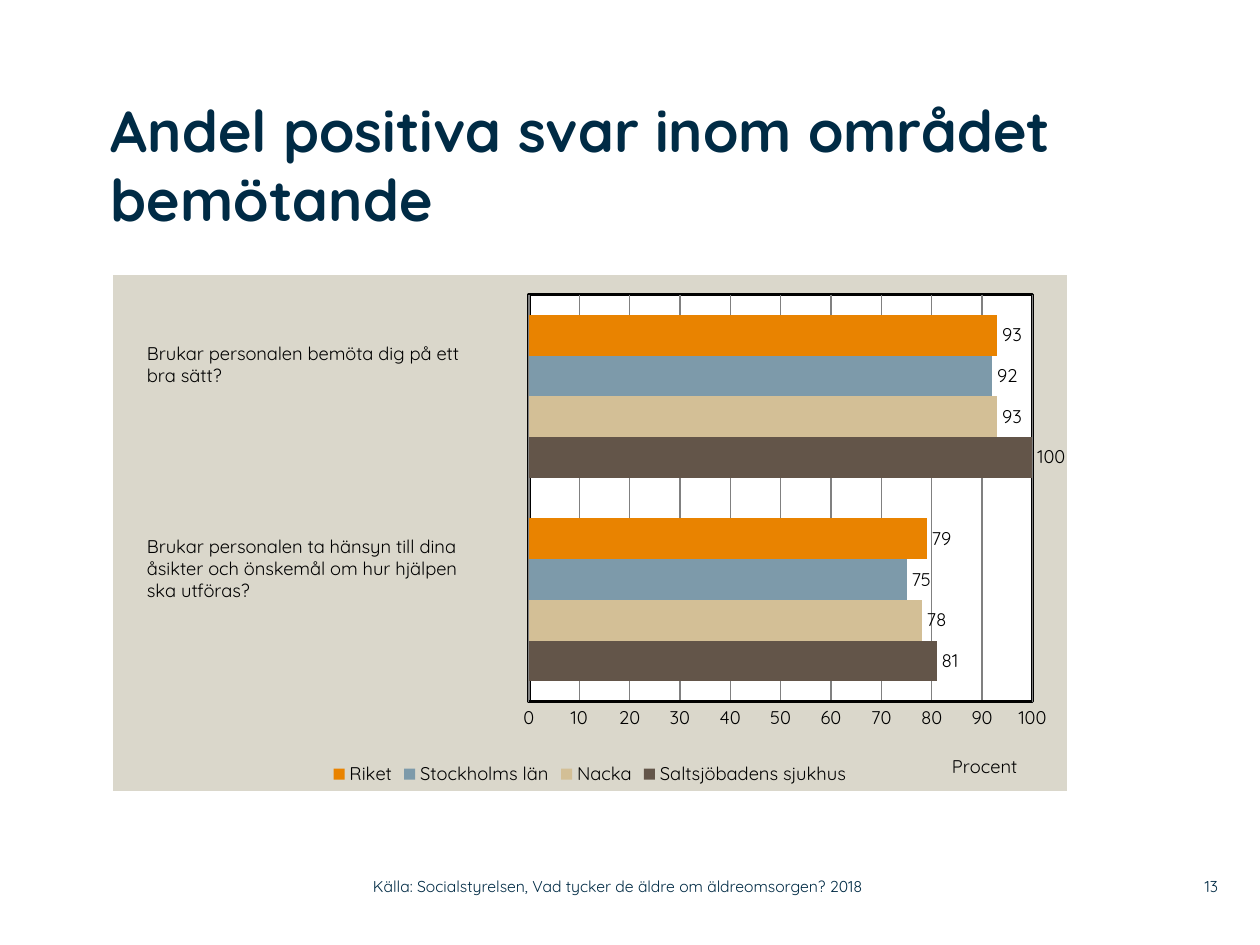
from lxml.etree import SubElement
from pptx import Presentation
from pptx.chart.data import CategoryChartData
from pptx.dml.color import RGBColor
from pptx.enum.chart import XL_CHART_TYPE, XL_LABEL_POSITION, XL_LEGEND_POSITION, XL_TICK_MARK
from pptx.enum.text import MSO_ANCHOR, PP_ALIGN
from pptx.oxml import parse_xml
from pptx.oxml.ns import nsdecls, qn
from pptx.util import Pt

FONT = "Quicksand"
NAVY = RGBColor(0x00, 0x2B, 0x45)
BLACK = RGBColor(0x00, 0x00, 0x00)
WHITE = RGBColor(0xFF, 0xFF, 0xFF)
GREY = RGBColor(0x80, 0x80, 0x80)
SAND = RGBColor(0xDA, 0xD7, 0xCB)
BROWN = RGBColor(0x63, 0x55, 0x49)
BEIGE = RGBColor(0xD3, 0xBF, 0x96)
BLUE = RGBColor(0x7D, 0x9A, 0xAA)
ORANGE = RGBColor(0xE9, 0x83, 0x00)


def px(*lengths):
    return [round(length * 914400 / 126) for length in lengths]


def add_text(box, lines, size, color, bold=False, align=PP_ALIGN.LEFT,
             anchor=MSO_ANCHOR.TOP, insets=(0, 0)):
    frame = slide.shapes.add_textbox(*px(*box)).text_frame
    frame.word_wrap = True
    frame.vertical_anchor = anchor
    frame.margin_left, frame.margin_top = px(*insets)
    frame.margin_right, frame.margin_bottom = px(*insets)
    for number, line in enumerate(lines):
        paragraph = frame.add_paragraph() if number else frame.paragraphs[0]
        paragraph.alignment = align
        run = paragraph.add_run()
        run.text = line
        run.font.name = FONT
        run.font.size = Pt(size)
        run.font.bold = bold
        run.font.color.rgb = color


presentation = Presentation()
presentation.slide_width, presentation.slide_height = px(1260, 945)
slide = presentation.slides.add_slide(presentation.slide_layouts[6])

# Chart data: the first series and category are drawn at the bottom
answers = [
    ("Saltsjöbadens sjukhus", (81, 100), BROWN),
    ("Nacka", (78, 93), BEIGE),
    ("Stockholms län", (75, 92), BLUE),
    ("Riket", (79, 93), ORANGE),
]
chart_data = CategoryChartData(number_format="0")
chart_data.categories = ["1", "2"]
for area, shares, _ in answers:
    chart_data.add_series(area, shares)
chart = slide.shapes.add_chart(
    XL_CHART_TYPE.BAR_CLUSTERED, *px(113, 275, 954, 516), chart_data).chart
chart.has_title = False
chart.font.name = FONT
chart.font.size = Pt(10.5)
chart.font.color.rgb = BLACK

# Bars and value labels
bars = chart.plots[0]
bars.gap_width = 100
bars.overlap = 0
bars.vary_by_categories = False
for series, (_, _, color) in zip(bars.series, answers):
    series.format.fill.solid()
    series.format.fill.fore_color.rgb = color
    labels = series.data_labels
    labels.show_value = True
    labels.position = XL_LABEL_POSITION.OUTSIDE_END
    labels.font.name = FONT
    labels.font.size = Pt(10.5)

# Axes and legend
chart.category_axis.visible = False
percent_axis = chart.value_axis
percent_axis.minimum_scale = 0
percent_axis.maximum_scale = 100
percent_axis.major_unit = 10
percent_axis.major_tick_mark = XL_TICK_MARK.NONE
percent_axis.format.line.color.rgb = BLACK
percent_axis.format.line.width = Pt(2)
percent_axis.major_gridlines.format.line.color.rgb = GREY
percent_axis.major_gridlines.format.line.width = Pt(0.75)
percent_title = percent_axis.axis_title
percent_run = percent_title.text_frame.paragraphs[0].add_run()
percent_run.text = "Procent"
percent_run.font.name = FONT
percent_run.font.size = Pt(10.5)
percent_run.font.bold = False
percent_run.font.color.rgb = BLACK
chart.has_legend = True
chart.legend.position = XL_LEGEND_POSITION.BOTTOM
chart.legend.include_in_layout = False
chart.legend.font.name = FONT
chart.legend.font.size = Pt(10.5)

# Manual places of the plot and the axis title, as shares of the chart
plot_area = chart.element.chart.plotArea
plot_place = [("layoutTarget", "inner"), ("xMode", "edge"), ("yMode", "edge"),
              ("x", 0.436), ("y", 0.038), ("w", 0.528), ("h", 0.789)]
title_place = [("xMode", "edge"), ("yMode", "edge"), ("x", 0.876), ("y", 0.92)]
title_element = percent_title._element
for parent, place, index in ((plot_area, plot_place, 0), (title_element, title_place, 1)):
    for old_layout in parent.findall(qn("c:layout")):
        parent.remove(old_layout)
    layout = parse_xml(f"<c:layout {nsdecls('c')}><c:manualLayout/></c:layout>")
    for tag, value in place:
        SubElement(layout[0], qn(f"c:{tag}")).set("val", str(value))
    parent.insert(index, layout)

# Chart background and framed white plot
fill_xml = '<c:spPr {}><a:solidFill><a:srgbClr val="{}"/></a:solidFill>{}</c:spPr>'
frame_line = ('<a:ln w="25400"><a:solidFill><a:srgbClr val="{}"/>'
              '</a:solidFill></a:ln>').format(BLACK)
plot_area.append(parse_xml(fill_xml.format(nsdecls("c", "a"), WHITE, frame_line)))
chart.element.chart.addnext(parse_xml(
    fill_xml.format(nsdecls("c", "a"), SAND, "<a:ln><a:noFill/></a:ln>")))

# Title
add_text((111, 95, 958, 179), ["Andel positiva svar inom området bemötande"],
         33, NAVY, bold=True)

# Questions beside the bars
add_text((134, 336, 374, 57),
         ["Brukar personalen bemöta dig på ett", "bra sätt?"],
         10.5, BLACK, insets=(13, 6))
add_text((134, 529, 377, 79),
         ["Brukar personalen ta hänsyn till dina",
          "åsikter och önskemål om hur hjälpen", "ska utföras?"],
         10.5, BLACK, insets=(13, 6))

# Footer
add_text((1159, 868, 59, 37), ["13"], 9, NAVY,
         align=PP_ALIGN.RIGHT, anchor=MSO_ANCHOR.MIDDLE)
add_text((373, 868, 558, 37),
         ["Källa: Socialstyrelsen, Vad tycker de äldre om äldreomsorgen? 2018"],
         9, NAVY, anchor=MSO_ANCHOR.MIDDLE)

presentation.save("out.pptx")
